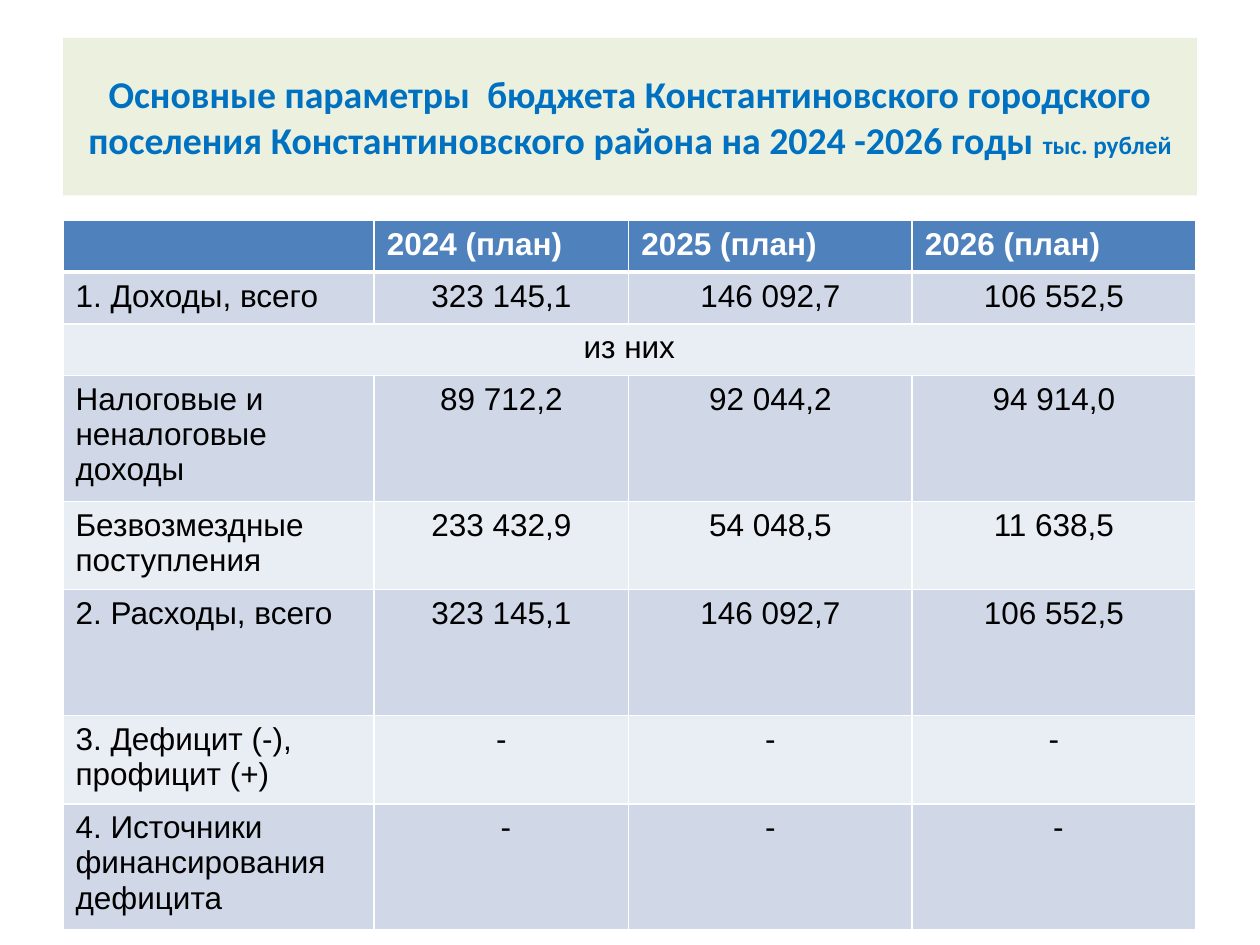
from lxml.etree import SubElement
from pptx import Presentation
from pptx.dml.color import RGBColor
from pptx.enum.text import MSO_ANCHOR, MSO_AUTO_SIZE, PP_ALIGN
from pptx.oxml.ns import qn
from pptx.util import Inches, Pt

COLORS = {
    "title_fill": "EBF1DE", "title": "0070C0", "header": "4F81BD",
    "odd": "D0D8E8", "even": "E9EDF4", "white": "FFFFFF", "black": "000000",
}
TITLE_RUNS = [
    ("Основные параметры  бюджета Константиновского городского поселения "
     "Константиновского района на 2024 -2026 годы ", 21.6),
    ("тыс. рублей", 14.4),
]
COLUMN_WIDTHS = [2.47, 2.02, 2.25, 2.25]
BUDGET_ROWS = [
    (0.41, ["", "2024 (план)", "2025 (план)", "2026 (план)"]),
    (0.41, ["1. Доходы, всего", "323 145,1", "146 092,7", "106 552,5"]),
    (0.41, ["из них"]),
    (1, ["Налоговые и неналоговые доходы", "89 712,2", "92 044,2", "94 914,0"]),
    (0.7, ["Безвозмездные поступления", "233 432,9", "54 048,5", "11 638,5"]),
    (1, ["2. Расходы, всего", "323 145,1", "146 092,7", "106 552,5"]),
    (0.7, ["3. Дефицит (-), профицит (+)", "-", "-", "-"]),
    (1, ["4. Источники финансирования дефицита", " -", "-", " -"]),
]


def color(name):
    return RGBColor.from_string(COLORS[name])


def add_run(paragraph, text, font_name, size, color_name, bold):
    run = paragraph.add_run()
    run.text = text
    run.font.name = font_name
    run.font.size = Pt(size)
    run.font.bold = bold
    run.font.color.rgb = color(color_name)


def set_borders(cell, widths):
    properties = cell._tc.get_or_add_tcPr()
    for index, (side, width) in enumerate(widths.items()):
        line = SubElement(properties, qn(f"a:ln{side}"), w=str(Pt(width)))
        fill = SubElement(line, qn("a:solidFill"))
        SubElement(fill, qn("a:srgbClr"), val=COLORS["white"])
        properties.remove(line)
        properties.insert(index, line)


def add_title(slide):
    title = slide.shapes.title
    title.left, title.top = Inches(0.5), Inches(0.3)
    title.width, title.height = Inches(9), Inches(1.25)
    title.fill.solid()
    title.fill.fore_color.rgb = color("title_fill")
    frame = title.text_frame
    frame.word_wrap = True
    frame.auto_size = MSO_AUTO_SIZE.NONE
    frame.vertical_anchor = MSO_ANCHOR.MIDDLE
    paragraph = frame.paragraphs[0]
    paragraph.alignment = PP_ALIGN.CENTER
    for text, size in TITLE_RUNS:
        add_run(paragraph, text, "Calibri", size, "title", True)


def add_budget_table(slide):
    table = slide.shapes.add_table(
        len(BUDGET_ROWS), len(COLUMN_WIDTHS), Inches(0.5), Inches(1.75),
        Inches(sum(COLUMN_WIDTHS)), Inches(sum(height for height, _ in BUDGET_ROWS)),
    ).table
    for column, width in zip(table.columns, COLUMN_WIDTHS):
        column.width = Inches(width)
    for row_index, (height, texts) in enumerate(BUDGET_ROWS):
        table.rows[row_index].height = Inches(height)
        is_header = row_index == 0
        is_merged = len(texts) == 1
        if is_merged:
            table.cell(row_index, 0).merge(table.cell(row_index, len(COLUMN_WIDTHS) - 1))
        fill_name = "header" if is_header else "odd" if row_index % 2 else "even"
        borders = {"L": 1, "R": 1, "T": 3 if row_index == 1 else 1, "B": 3 if is_header else 1}
        for column_index, cell in enumerate(table.rows[row_index].cells):
            cell.fill.solid()
            cell.fill.fore_color.rgb = color(fill_name)
            set_borders(cell, borders)
            if column_index >= len(texts):
                continue
            paragraph = cell.text_frame.paragraphs[0]
            centered = is_merged or (column_index > 0 and not is_header)
            paragraph.alignment = PP_ALIGN.CENTER if centered else PP_ALIGN.LEFT
            paragraph.font.size = Pt(18)
            if texts[column_index]:
                add_run(paragraph, texts[column_index], "Arial", 18,
                        "white" if is_header else "black", is_header)


def main():
    """Build the budget parameters slide."""
    presentation = Presentation()
    presentation.slide_width, presentation.slide_height = Inches(10), Inches(7.5)
    slide = presentation.slides.add_slide(presentation.slide_layouts[5])
    add_title(slide)
    add_budget_table(slide)
    presentation.save("out.pptx")


if __name__ == "__main__":
    main()
